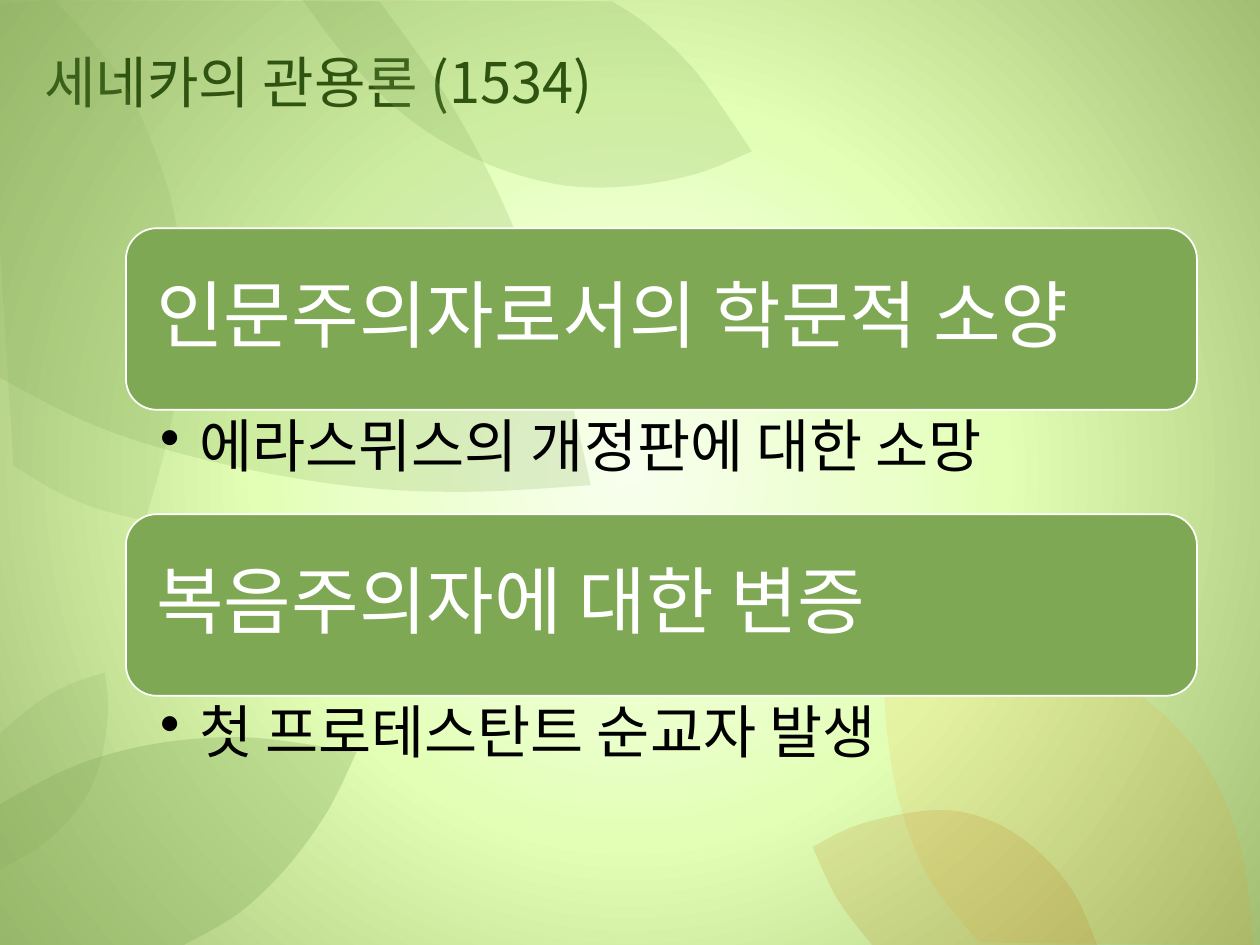
from lxml import etree
from pptx import Presentation
from pptx.dml.color import RGBColor
from pptx.enum.shapes import MSO_SHAPE
from pptx.enum.text import MSO_ANCHOR, PP_ALIGN
from pptx.oxml import parse_xml
from pptx.oxml.ns import nsdecls, qn
from pptx.util import Cm, Pt

ROUNDED = MSO_SHAPE.ROUNDED_RECTANGLE
MIDDLE = MSO_ANCHOR.MIDDLE
TOP = MSO_ANCHOR.TOP
LEFT = PP_ALIGN.LEFT

COLORS = {
    "leaf": "7FA854", "amber": "FD8A03", "rust": "BE6802",
    "title": "1C4001", "white": "FFFFFF", "black": "000000",
}
BACKDROP = [(0, "F8FFEE"), (33, "EAFFC9"), (47, "E2FFB5"), (100, "A2BE73")]
TITLE_FONT, BODY_FONT = "Noto Sans CJK KR", "Arial"
CURVE_STEPS = 6

LEAVES = [
    ("amber", 10, [
        [(17.83, 12.93), (19.02, 12.85), (20.6, 13), (22.56, 13.72),
         (24.13, 15.14), (24.99, 16.99), (25.27, 19.05)],
        [(19.74, 19), (18.75, 17.75), (18.14, 16.21), (17.86, 14.53), (17.83, 12.93)]]),
    ("rust", 15, [
        [(16.38, 17.07), (17.35, 16.61), (18.82, 16.33), (19.89, 16.51),
         (20.85, 17.09), (21.64, 17.98), (22.12, 19.05)],
        [(17.58, 19.05), (16.89, 18.14), (16.38, 17.07)]]),
    ("leaf", 15, [
        [(-0.3, 0.1), (1.09, 0)],
        [(1.09, 0), (1.73, 0.69), (2.46, 1.63), (3.02, 2.77), (3.47, 4.11),
         (3.65, 5.47), (3.64, 7.13), (3.41, 8.71), (2.93, 10.5)],
        [(2.93, 10.5), (1.92, 10.24), (1.09, 9.88), (0.27, 9.39)]]),
    ("leaf", 20, [
        [(11.91, 9.78), (9.7, 9.91), (7.7, 9.86), (5.72, 9.6),
         (3.56, 9.12), (1.75, 8.51), (0, 7.62)],
        [(-0.05, 0), (7.65, 0.03)],
        [(7.65, 0.03), (8.76, 1.57), (9.63, 3.05), (10.39, 4.67),
         (11.05, 6.48), (11.51, 8.05), (11.91, 9.78)]]),
    ("leaf", 20, [
        [(6.1, 0), (12.34, 0.03)],
        [(12.34, 0.03), (13.06, 0.51), (14.05, 1.47), (15.16, 3.05)],
        [(15.16, 3.05), (14.02, 3.51), (12.6, 3.76), (11.2, 3.71),
         (9.65, 3.23), (8.2, 2.36), (6.99, 1.17), (6.1, 0)]]),
    ("leaf", 17, [
        [(2.11, 13.56), (2.18, 14.3), (2.01, 15.42), (1.57, 16.31),
         (0.84, 17.04), (0, 17.53)],
        [(0, 14.78), (0.74, 14.17), (1.42, 13.79), (2.11, 13.56)]]),
    ("leaf", 30, [
        [(0, 16.21), (1.27, 15.54), (2.44, 15.14), (3.76, 14.91),
         (5.23, 14.88), (7.19, 15.16)],
        [(7.19, 15.16), (6.6, 16.36), (5.77, 17.5), (4.8, 18.42), (3.71, 19.05)],
        [(3.71, 19.05), (0, 19.05)]]),
]

TOPICS = [
    ("인문주의자로서의 학문적 소양", "에라스뮈스의 개정판에 대한 소망"),
    ("복음주의자에 대한 변증", "첫 프로테스탄트 순교자 발생"),
]


def color(name):
    """Return the named colour."""
    return RGBColor.from_string(COLORS[name])


def smooth_side(knots):
    """Return points of a Catmull-Rom curve through the knots."""
    padded = [knots[0], *knots, knots[-1]]
    points = [knots[0]]
    for a, b, c, d in zip(padded, padded[1:], padded[2:], padded[3:]):
        for step in range(1, CURVE_STEPS + 1):
            t = step / CURVE_STEPS
            points.append(tuple(
                q + t * (r - p) / 2 + t * t * (2 * p - 5 * q + 4 * r - s) / 2
                + t ** 3 * (3 * q - p - 3 * r + s) / 2
                for p, q, r, s in zip(a, b, c, d)))
    return points


def paint_backdrop(page):
    """Fill the page with a radial gradient."""
    page.background.fill.gradient()
    old = page.element.find(".//" + qn("a:gradFill"))
    stops = "".join(
        f'<a:gs pos="{place * 1000}"><a:srgbClr val="{tint}"/></a:gs>'
        for place, tint in BACKDROP)
    old.getparent().replace(old, parse_xml(
        f'<a:gradFill {nsdecls("a")} rotWithShape="1"><a:gsLst>{stops}</a:gsLst>'
        '<a:path path="circle"><a:fillToRect l="20000" t="30000" r="20000" b="30000"/>'
        '</a:path></a:gradFill>'))


def add_leaf(page, left, top, tint, opacity, sides):
    """Draw a translucent leaf from its curved sides."""
    points = [(Cm(left + x), Cm(top + y)) for side in sides for x, y in smooth_side(side)]
    builder = page.shapes.build_freeform(*points[0])
    builder.add_line_segments(points[1:], close=True)
    leaf = builder.convert_to_shape()
    leaf.shadow.inherit = False
    leaf.line.fill.background()
    leaf.fill.solid()
    leaf.fill.fore_color.rgb = color(tint)
    tone = leaf.element.spPr.find(qn("a:solidFill"))[0]
    etree.SubElement(tone, qn("a:alpha"), val=str(opacity * 1000))


def write(frame, text, size, font, tint, anchor, insets=None):
    """Write one left-aligned run and return its paragraph."""
    frame.word_wrap = True
    frame.vertical_anchor = anchor
    if insets:
        (frame.margin_left, frame.margin_top,
         frame.margin_right, frame.margin_bottom) = map(Cm, insets)
    para = frame.paragraphs[0]
    para.alignment = LEFT
    span = para.add_run()
    span.text = text
    span.font.size = Pt(size)
    span.font.name = font
    span.font.color.rgb = color(tint)
    return para


def add_title(page, left, top, width, height):
    """Place and format the title placeholder."""
    box = page.shapes.title
    box.left, box.top, box.width, box.height = map(Cm, (left, top, width, height))
    write(box.text_frame, "세네카의 관용론 (1534)", 32, TITLE_FONT, "title", MIDDLE)


def add_topic(page, left, top, width, height, heading, point):
    """Stack a rounded heading bar over its bulleted point."""
    bar_height = 0.635 * height
    bar = page.shapes.add_shape(ROUNDED, *map(Cm, (left, top, width, bar_height)))
    bar.adjustments[0] = 0.17
    bar.shadow.inherit = False
    bar.fill.solid()
    bar.fill.fore_color.rgb = color("leaf")
    bar.line.color.rgb = color("white")
    bar.line.width = Pt(1)
    para = write(bar.text_frame, heading, 42, BODY_FONT, "white", MIDDLE, [0.43] * 4)
    para.line_spacing = 0.9

    box = page.shapes.add_textbox(
        *map(Cm, (left, top + bar_height, width, height - bar_height)))
    para = write(box.text_frame, point, 33, BODY_FONT, "black", TOP,
                 (0.69, 0.15, 0.84, 0.15))
    para.line_spacing = 0.9
    para.level = 1
    props = para._p.get_or_add_pPr()
    props.set("marL", str(Cm(0.79)))
    props.set("indent", str(Cm(-0.79)))
    etree.SubElement(props, qn("a:buChar"), char="•")


def add_topics(page, left, top, width, height):
    """Share the box equally among the topics."""
    share = height / len(TOPICS)
    for index, topic in enumerate(TOPICS):
        add_topic(page, left, top + index * share, width, share, *topic)


def main():
    """Build and save the deck."""
    deck = Presentation()
    deck.slide_width, deck.slide_height = Cm(25.4), Cm(19.05)
    page = deck.slides.add_slide(deck.slide_layouts[5])
    paint_backdrop(page)
    for leaf in LEAVES:
        add_leaf(page, 0, 0, *leaf)
    add_title(page, 0.64, 0.48, 24.1, 2.31)
    add_topics(page, 2.54, 4.6, 21.59, 11.53)
    deck.save("out.pptx")


if __name__ == "__main__":
    main()
